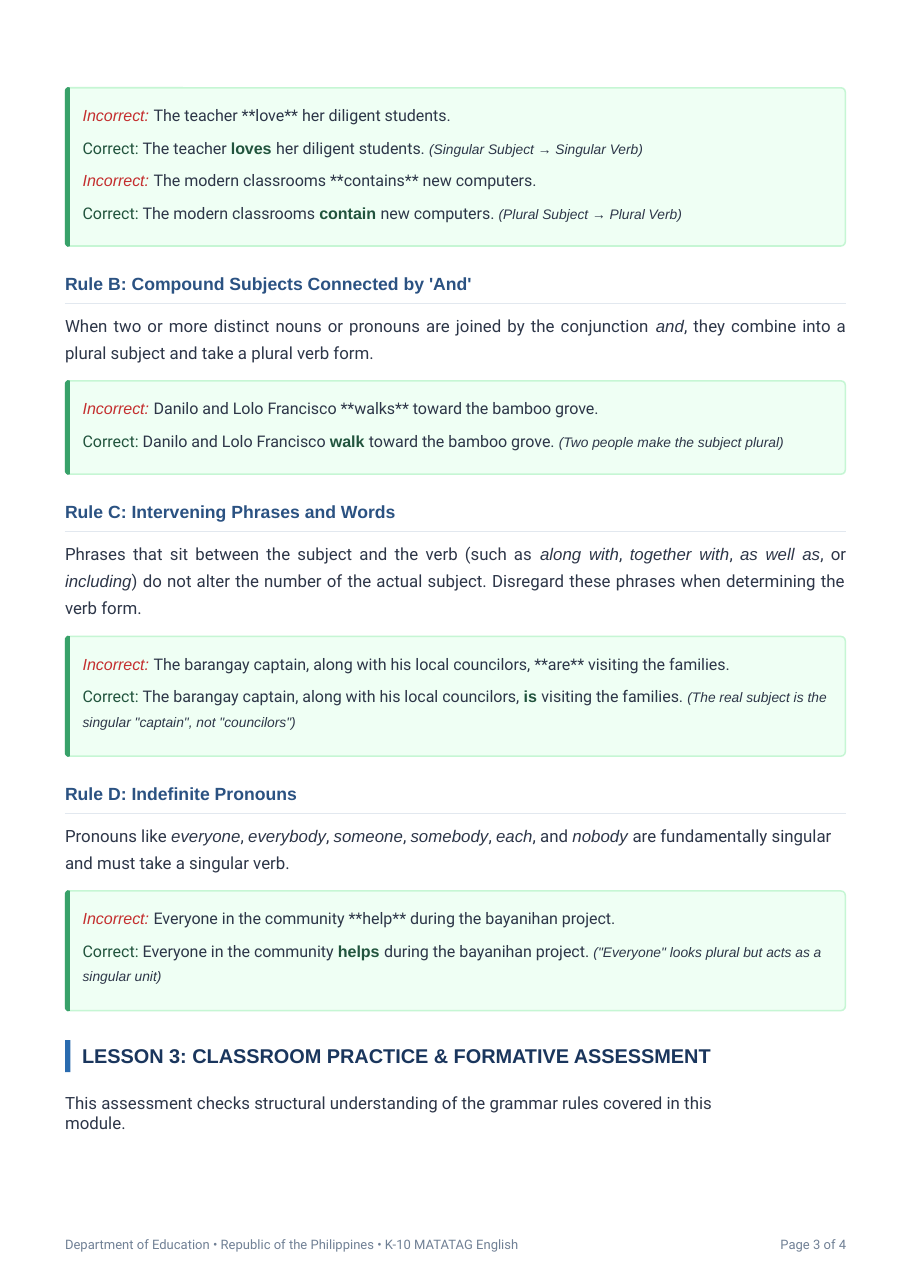
from dataclasses import dataclass
from itertools import cycle

from lxml.etree import SubElement
from pptx import Presentation
from pptx.dml.color import RGBColor
from pptx.enum.shapes import MSO_CONNECTOR, MSO_SHAPE
from pptx.enum.text import PP_ALIGN
from pptx.oxml.ns import qn
from pptx.util import Inches, Pt

COLOURS = {
    "panel": "EFFFF4", "border": "C6F6D4", "bar": "38A169", "divider": "E2E8EF",
    "lesson_bar": "2A6BAF", "lesson": "1A365D", "heading": "2B5282",
    "body": "2D3648", "wrong": "C42F2F", "right": "21543D", "footer": "708095",
}

# Page grid
PAGE_WIDTH, PAGE_HEIGHT = Inches(8.26), Inches(11.69)
COLUMNS, ROWS = 826, 1169
LEFT, RIGHT = 59, 768
EXAMPLE_LEFT, EXAMPLE_RIGHT = 75, 766


def across(columns: float) -> int:
    return round(PAGE_WIDTH * columns / COLUMNS)


def down(rows: float) -> int:
    return round(PAGE_HEIGHT * rows / ROWS)


@dataclass
class Example:
    wrong: str
    before: str
    verb: str
    after: str
    note: str


@dataclass
class Panel:
    top: float
    rows: float
    examples: list[Example]


@dataclass
class Rule:
    title: str
    divider: float
    explanation: list[str]  # plain and italic pieces in turn
    panel: Panel
    align: PP_ALIGN = PP_ALIGN.JUSTIFY


OPENING = Panel(79, 145, [
    Example("The teacher **love** her diligent students.",
            "The teacher ", "loves ", "her diligent students. ",
            "(Singular Subject → Singular Verb)"),
    Example("The modern classrooms **contains** new computers.",
            "The modern classrooms ", "contain ", "new computers. ",
            "(Plural Subject → Plural Verb)"),
])

RULES = [
    Rule("Rule B: Compound Subjects Connected by 'And'", 275,
         ["When two or more distinct nouns or pronouns are joined by the conjunction ",
          "and", ", they combine into a plural subject and take a plural verb form."],
         Panel(345, 86, [Example(
             "Danilo and Lolo Francisco **walks** toward the bamboo grove.",
             "Danilo and Lolo Francisco ", "walk ", "toward the bamboo grove. ",
             "(Two people make the subject plural)")])),
    Rule("Rule C: Intervening Phrases and Words", 482,
         ["Phrases that sit between the subject and the verb (such as ",
          "along with", ", ", "together with", ", ", "as well as", ", or ", "including",
          ") do not alter the number of the actual subject. Disregard these phrases "
          "when determining the verb form."],
         Panel(577, 110, [Example(
             "The barangay captain, along with his local councilors, **are** "
             "visiting the families.",
             "The barangay captain, along with his local councilors, ", "is ",
             "visiting the families. ",
             '(The real subject is the singular "captain", not "councilors")')])),
    Rule("Rule D: Indefinite Pronouns", 738,
         ["Pronouns like ", "everyone", ", ", "everybody", ", ", "someone", ", ",
          "somebody", ", ", "each", ", and ", "nobody ",
          "are fundamentally singular and must take a singular verb."],
         Panel(808, 110, [Example(
             "Everyone in the community **help** during the bayanihan project.",
             "Everyone in the community ", "helps ", "during the bayanihan project. ",
             '("Everyone" looks plural but acts as a singular unit)')]),
         PP_ALIGN.LEFT),
]

deck = Presentation()
deck.slide_width, deck.slide_height = PAGE_WIDTH, PAGE_HEIGHT
slide = deck.slides.add_slide(deck.slide_layouts[6])


# Text
def text_frame(left: float, top: float, right: float, rows: float):
    frame = slide.shapes.add_textbox(
        across(left), down(top), across(right - left), down(rows)).text_frame
    frame.word_wrap = True
    frame.margin_left = frame.margin_right = frame.margin_top = frame.margin_bottom = 0
    return frame


def write(paragraph, text: str, *, size: float, colour: str = "body",
          font: str = "Roboto", bold: bool = False, italic: bool = False) -> None:
    run = paragraph.add_run()
    run.text = text
    run.font.name, run.font.size = font, Pt(size)
    run.font.bold, run.font.italic = bold, italic
    run.font.color.rgb = RGBColor.from_string(COLOURS[colour])


# Shapes
def paint(shape, fill: str, border: str | None = None) -> None:
    shape.shadow.inherit = False
    shape.fill.solid()
    shape.fill.fore_color.rgb = RGBColor.from_string(COLOURS[fill])
    if border:
        shape.line.color.rgb = RGBColor.from_string(COLOURS[border])
        shape.line.width = Pt(1)
    else:
        shape.line.fill.background()


def draw_divider(row: float) -> None:
    divider = slide.shapes.add_connector(
        MSO_CONNECTOR.STRAIGHT, across(LEFT), down(row), across(RIGHT), down(row))
    divider.line.color.rgb = RGBColor.from_string(COLOURS["divider"])
    divider.line.width = Pt(0.75)
    SubElement(divider.element.spPr, qn("a:effectLst"))


def draw_panel(panel: Panel) -> None:
    inset, corner, bottom = 0.7, 4, panel.top + panel.rows
    card = slide.shapes.add_shape(
        MSO_SHAPE.ROUNDED_RECTANGLE, across(LEFT + inset), down(panel.top + inset),
        across(RIGHT - LEFT - 2 * inset), down(panel.rows - 2 * inset))
    card.adjustments[0] = corner / panel.rows
    paint(card, "panel", "border")

    # Green edge with rounded outer corners
    upper = [(4.5, 0.5), (2.5, 0), (1, 1), (0, 2.5), (0, 4)]
    outline = [(LEFT + x, panel.top + y) for x, y in upper]
    outline += [(LEFT + x, bottom - y) for x, y in reversed(upper)]
    points = [(across(x), down(y)) for x, y in outline]
    edge = slide.shapes.build_freeform(*points[0])
    edge.add_line_segments(points[1:], close=True)
    paint(edge.convert_to_shape(), "bar")

    frame = text_frame(EXAMPLE_LEFT, panel.top + 17, EXAMPLE_RIGHT, panel.rows - 34)
    for number, example in enumerate(panel.examples):
        wrong = frame.add_paragraph() if number else frame.paragraphs[0]
        right = frame.add_paragraph()
        for line in (wrong, right) if number else (right,):
            line.line_spacing, line.space_before = 1.45, Pt(3)
        write(wrong, "Incorrect: ", size=10.5, colour="wrong", font="Arial", italic=True)
        write(wrong, example.wrong, size=10.5)
        write(right, "Correct: ", size=10.5, colour="right")
        write(right, example.before, size=10.5)
        write(right, example.verb, size=10.5, colour="right", font="Arial", bold=True)
        write(right, example.after, size=10.5)
        write(right, example.note, size=9, font="Arial", italic=True)


def draw_rule(rule: Rule) -> None:
    draw_divider(rule.divider + 0.5)
    top = rule.divider - 27
    frame = text_frame(LEFT, top, RIGHT, rule.panel.top - top - 10)
    write(frame.paragraphs[0], rule.title, size=11.5, colour="heading",
          font="Arial", bold=True)
    explanation = frame.add_paragraph()
    explanation.alignment = rule.align
    explanation.line_spacing, explanation.space_before = 1.33, Pt(9.8)
    for piece, italic in zip(rule.explanation, cycle((False, True))):
        write(explanation, piece, size=11, font="Arial" if italic else "Roboto",
              italic=italic)
    draw_panel(rule.panel)


# Grammar rules
draw_panel(OPENING)
for grammar_rule in RULES:
    draw_rule(grammar_rule)

# Lesson heading and introduction
lesson_bar = slide.shapes.add_shape(
    MSO_SHAPE.RECTANGLE, across(LEFT), down(944), across(5), down(29))
paint(lesson_bar, "lesson_bar")
write(text_frame(74.5, 947.5, RIGHT, 21).paragraphs[0],
      "LESSON 3: CLASSROOM PRACTICE & FORMATIVE ASSESSMENT",
      size=13, colour="lesson", font="Arial", bold=True)
write(text_frame(LEFT, 992, 680, 36).paragraphs[0],
      "This assessment checks structural understanding of the grammar rules "
      "covered in this module.", size=11)

# Footer
write(text_frame(LEFT, 1122, 500, 16).paragraphs[0],
      "Department of Education • Republic of the Philippines • K-10 MATATAG English",
      size=8.5, colour="footer")
page_number = text_frame(680, 1122, RIGHT, 16).paragraphs[0]
page_number.alignment = PP_ALIGN.RIGHT
write(page_number, "Page 3 of 4", size=8.5, colour="footer")

deck.save("out.pptx")
